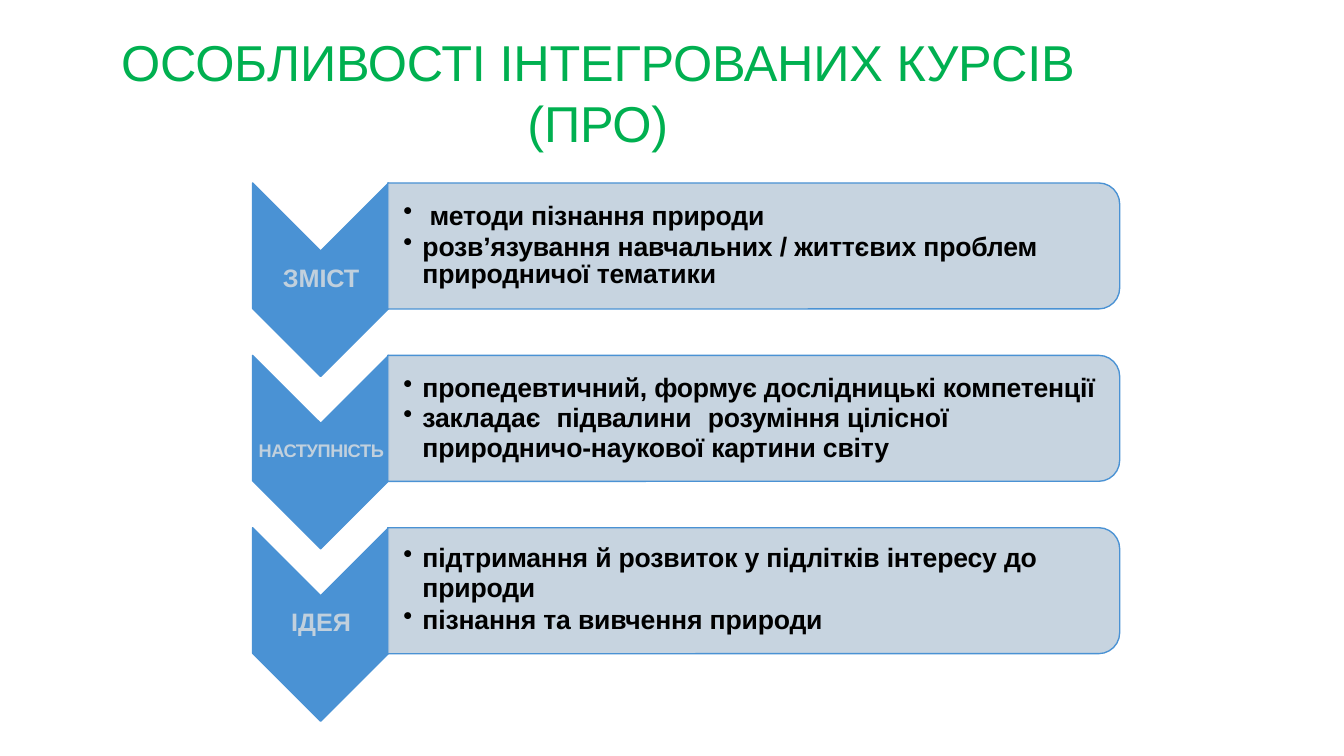
import pptx
import pptx.util
import pptx.dml.color
import pptx.enum.shapes
import pptx.enum.text
import pptx.oxml
from pptx.oxml.ns import qn

COLOURS = {"title": "00B050", "arrow": "4A92D4", "panel": "C1D0DD", "body": "000000"}
SHAPES = pptx.enum.shapes.MSO_SHAPE
ALIGN = pptx.enum.text.PP_ALIGN
ANCHOR = pptx.enum.text.MSO_ANCHOR

# Each row: label, label size, label top offset, panel points.
# Each point: text, left indent, space before, line spacing, tracking, tab stops.
ROWS = [
    ("ЗМІСТ", 18, 78, -0.06, [
        ("методи пізнання природи", 27, 0, None, -0.15, []),
        ("розв’язування навчальних / життєвих проблем природничої тематики",
         20, 2.8, 19.3, -0.1, []),
    ]),
    ("НАСТУПНІСТЬ", 13, 83, -0.25, [
        ("пропедевтичний, формує дослідницькі компетенції", 20, 0, None, -0.13, []),
        ("закладає\tпідвалини\tрозуміння цілісної\vприродничо-наукової картини світу",
         20, 0.2, 21.2, -0.1, [153, 303]),
    ]),
    ("ІДЕЯ", 18, 78, -0.02, [
        ("підтримання й розвиток у підлітків інтересу до природи", 20, 0, 21.2, -0.1, []),
        ("пізнання та вивчення природи", 20, 0.2, None, -0.1, []),
    ]),
]


class Deck:
    PX = 9144  # EMU in one px, 100 px to the inch
    FONT = "Arial"

    def __init__(self, width, height):
        self.file = pptx.Presentation()
        self.file.slide_width = self.px(width)
        self.file.slide_height = self.px(height)
        self.slide = self.file.slides.add_slide(self.file.slide_layouts[6])

    def px(self, length):
        return pptx.util.Emu(length * self.PX)

    def colour(self, name):
        return pptx.dml.color.RGBColor.from_string(COLOURS[name])

    def turned_shape(self, kind, left, top, width, height, fill, opacity=100):
        """Preset shape turned a quarter clockwise; the box is as seen after the turn."""
        shift = (width - height) // 2
        shape = self.slide.shapes.add_shape(
            kind, self.px(left + shift), self.px(top - shift), self.px(height), self.px(width))
        shape.rotation = 90
        shape.shadow.inherit = False
        shape.fill.solid()
        shape.fill.fore_color.rgb = self.colour(fill)
        if opacity < 100:
            solid = shape._element.spPr.find(qn("a:solidFill"))
            pptx.oxml.xmlchemy.OxmlElement("a:alpha")
            alpha = solid[0].makeelement(qn("a:alpha"), {"val": str(opacity * 1000)})
            solid[0].append(alpha)
        shape.line.color.rgb = self.colour("arrow")
        shape.line.width = pptx.util.Pt(0.96)
        return shape

    def text_box(self, left, top, width, height, anchor=ANCHOR.TOP):
        frame = self.slide.shapes.add_textbox(
            self.px(left), self.px(top), self.px(width), self.px(height)).text_frame
        frame.word_wrap = True
        frame.vertical_anchor = anchor
        frame.margin_left = frame.margin_right = frame.margin_bottom = 0
        frame.margin_top = self.px(1)
        return frame

    def style(self, paragraph, size, colour, bold, tracking):
        font = paragraph.font
        font.name = self.FONT
        font.size = pptx.util.Pt(size)
        font.bold = bold
        font.color.rgb = self.colour(colour)
        for run in paragraph.runs:
            run._r.get_or_add_rPr().set("spc", str(round(tracking * 100)))

    def line(self, box, text, size, colour, bold, tracking, anchor=ANCHOR.TOP):
        """One centred paragraph in its own box."""
        paragraph = self.text_box(*box, anchor).paragraphs[0]
        paragraph.text = text
        paragraph.alignment = ALIGN.CENTER
        self.style(paragraph, size, colour, bold, tracking)

    def bullets(self, box, points):
        frame = self.text_box(*box)
        for index, (text, indent, before, spacing, tracking, stops) in enumerate(points):
            paragraph = frame.add_paragraph() if index else frame.paragraphs[0]
            paragraph.text = text
            if index:
                paragraph.space_before = pptx.util.Pt(before)
            if spacing:
                paragraph.line_spacing = pptx.util.Pt(spacing)
            props = paragraph._p.get_or_add_pPr()
            props.set("marL", str(self.px(indent)))
            props.set("indent", str(self.px(1 - indent)))
            bullet = props.makeelement(qn("a:buChar"), {"char": "•"})
            props.append(bullet)
            if stops:
                tabs = props.makeelement(qn("a:tabLst"), {})
                for stop in stops:
                    tabs.append(props.makeelement(
                        qn("a:tab"), {"pos": str(self.px(stop)), "algn": "l"}))
                props.append(tabs)
            self.style(paragraph, 19, "body", True, tracking)


def main():
    deck = Deck(1333, 750)
    deck.line((83, 29, 1020, 123), "ОСОБЛИВОСТІ ІНТЕГРОВАНИХ КУРСІВ (ПРО)",
              36, "title", False, -0.15, ANCHOR.MIDDLE)

    left, first_top, pitch = 251, 181, 171
    arrow_width, arrow_height = 135, 192
    panel_left, panel_width, panel_height = 385, 726, 125
    for index, (label, size, offset, tracking, points) in enumerate(ROWS):
        top = first_top + index * pitch
        deck.turned_shape(SHAPES.CHEVRON, left, top, arrow_width, arrow_height, "arrow")
        deck.line((left, top + offset, arrow_width, 32), label, size, "panel", True, tracking)
        deck.turned_shape(SHAPES.ROUND_2_SAME_RECTANGLE, panel_left, top,
                          panel_width, panel_height, "panel", opacity=90)
        text_width = 698 if index == 1 else 639
        deck.bullets((panel_left + 14, top + 15, text_width, 92), points)
    deck.file.save("out.pptx")


if __name__ == "__main__":
    main()
